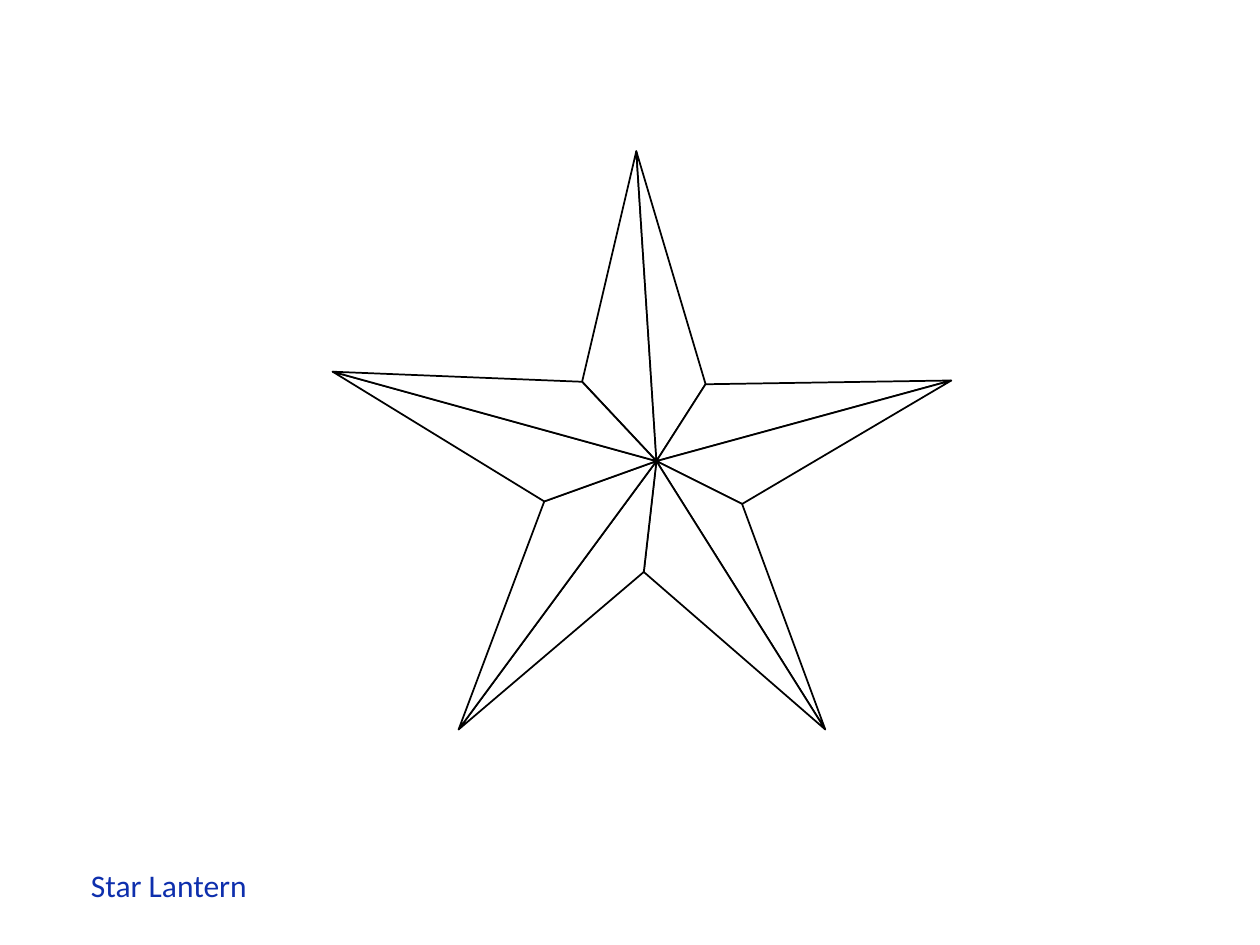
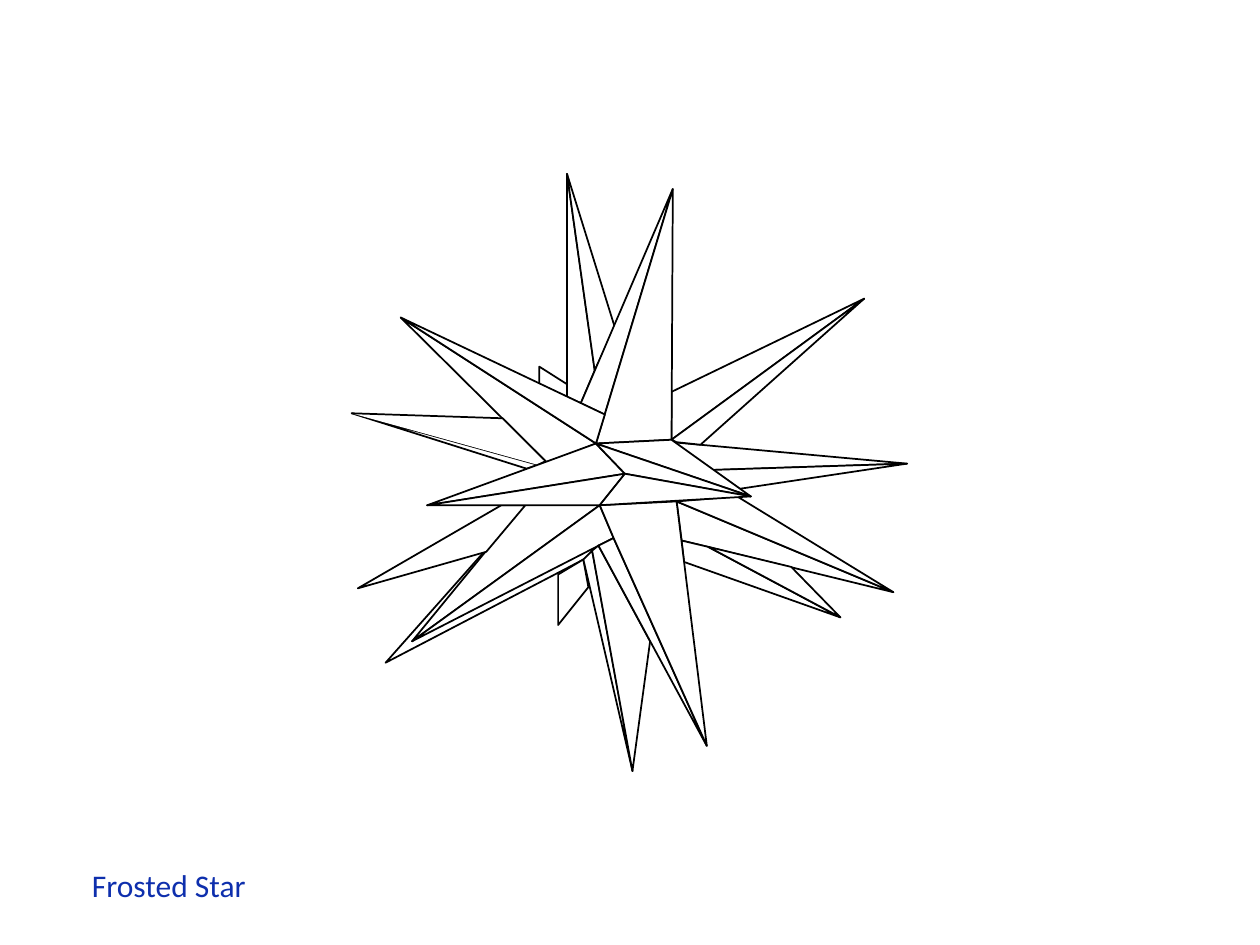
"""Build two slides of paper stars, each star a stack of folded spikes."""
from dataclasses import dataclass
from itertools import pairwise

from pptx import Presentation
from pptx.dml.color import RGBColor
from pptx.enum.text import PP_ALIGN
from pptx.slide import Slide
from pptx.util import Inches, Pt

WHITE = RGBColor(0xFF, 0xFF, 0xFF)
BLACK = RGBColor(0x00, 0x00, 0x00)
BLUE = RGBColor(0x0E, 0x2F, 0xAD)

CAPTION_BOX = {"left": Inches(-2.16), "top": Inches(6.82),
               "width": Inches(7), "height": Inches(1)}
CAPTION_PARAGRAPH = {"alignment": PP_ALIGN.CENTER, "space_before": Pt(3.6)}
CAPTION_FONT = {"name": "Calibri", "size": Pt(18)}
OUTLINE = Pt(1)

Point = tuple[float, float]


@dataclass(frozen=True)
class Spike:
    """A tip over a chain of base points; a ridge runs to each base index in folds."""
    name: str
    tip: Point
    base: tuple[Point, ...]
    folds: tuple[int, ...] = ()
    soft_ridge: bool = False

    def facets(self) -> list[tuple[Point, ...]]:
        """Split the base at the folds and join every part to the tip."""
        cuts = (0, *self.folds, len(self.base) - 1)
        return [(*self.base[a:b + 1], self.tip) for a, b in pairwise(cuts)]


LANTERN_CENTRE = (5.21, 3.66)
LANTERN_TIPS = {"top": (5.05, 1.2), "right": (7.55, 3.02), "lower right": (6.55, 5.79),
                "lower left": (3.64, 5.79), "left": (2.64, 2.95)}
LANTERN_VALLEYS = [(5.6, 3.05), (5.89, 4), (5.11, 4.54), (4.32, 3.98), (4.62, 3.03)]

HUB = (4.96, 3.76)
HUB_NW, HUB_NE = (4.73, 3.52), (5.33, 3.49)
HUB_SW, HUB_SE = (4.76, 4.01), (5.37, 3.98)
NOTCH_N, NOTCH_NW = (4.61, 3.2), (4.8, 3.29)
NOTCH_S, NOTCH_SW, NOTCH_SE = (4.75, 4.33), (4.87, 4.27), (5.41, 4.29)
STUB_FOOT = (4.5, 3.15)
LOW_W_FOOT = (4.17, 4.01)

REAR_SPIKES = [
    Spike("upper stub", (4.28, 2.91), ((4.5, 3.05), STUB_FOOT, (4.28, 3.05))),
    Spike("rear south-west", (3.06, 5.26),
          (LOW_W_FOOT, HUB_SW, NOTCH_SW, (4.7, 4.36), (4.71, 4.4))),
    Spike("lower stub", (4.43, 4.96), ((4.67, 4.66), (4.63, 4.44), (4.43, 4.56))),
]
RING_SPIKES = [
    Spike("east", (7.2, 3.68), ((5.34, 3.51), (5.66, 3.73), (5.87, 3.88)), folds=(1,)),
    Spike("north-east", (6.86, 2.37),
          ((5.33, 3.11), HUB_NE, (5.37, 3.51), (5.56, 3.53)), folds=(1,)),
    Spike("north left", (4.5, 1.38),
          (STUB_FOOT, NOTCH_N, (4.72, 2.94), (4.88, 2.6)), folds=(2,)),
    Spike("north right", (5.34, 1.5), (NOTCH_N, NOTCH_NW, HUB_NW, HUB_NE), folds=(1,)),
    Spike("north-west", (3.18, 2.52), ((4.34, 3.67), HUB_NW, NOTCH_NW), folds=(1,)),
    Spike("west", (2.79, 3.28), ((4.18, 3.72), (4.27, 3.69), (4.33, 3.66), (3.99, 3.32)),
          folds=(1,), soft_ridge=True),
    Spike("south-west", (3.27, 5.09), ((4.18, 3.98), HUB_SW, NOTCH_SW), folds=(1,)),
    Spike("lower west", (2.84, 4.67), ((3.98, 4.01), LOW_W_FOOT, (3.86, 4.38))),
    Spike("south-east", (7.09, 4.7), (NOTCH_SE, HUB_SE, (5.85, 3.94)), folds=(1,)),
    Spike("lower south-east", (6.67, 4.9),
          ((5.43, 4.46), NOTCH_SE, (5.62, 4.34), (6.28, 4.5)), folds=(2,)),
    Spike("south left", (5.02, 6.12),
          ((4.63, 4.44), (4.7, 4.37), NOTCH_S, (5.16, 5.09)), folds=(1,)),
    Spike("south right", (5.61, 5.92), (NOTCH_S, NOTCH_SW, HUB_SW, HUB_SE), folds=(1,)),
]
FRONT_SPIKES = [
    Spike("front left", (3.39, 4.01), (HUB_NW, HUB, HUB_SW), folds=(1,)),
    Spike("front right", (5.96, 3.94), (HUB_NE, HUB_NW, HUB, HUB_SW), folds=(1, 2)),
]


def lantern_spikes() -> list[Spike]:
    """Fold each spike along the centre, between the valleys beside its tip."""
    return [Spike(name, tip, (LANTERN_VALLEYS[i - 1], LANTERN_CENTRE, LANTERN_VALLEYS[i]),
                  folds=(1,))
            for i, (name, tip) in enumerate(LANTERN_TIPS.items())]


def set_format(target: object, values: dict[str, object]) -> None:
    for name, value in values.items():
        setattr(target, name, value)


def add_captioned_slide(prs: Presentation, caption: str) -> Slide:
    s = prs.slides.add_slide(prs.slide_layouts[0])
    title = s.shapes.title.element
    title.getparent().remove(title)
    sp = s.placeholders[1]
    set_format(sp, CAPTION_BOX)
    p = sp.text_frame.paragraphs[0]
    set_format(p, CAPTION_PARAGRAPH)
    r = p.add_run()
    r.text = caption
    set_format(r.font, CAPTION_FONT)
    r.font.color.rgb = BLUE
    return s


def draw_facet(s: Slide, name: str, points: tuple[Point, ...], closed: bool) -> None:
    start, *rest = [(Inches(x), Inches(y)) for x, y in points]
    builder = s.shapes.build_freeform(*start)
    builder.add_line_segments(rest, close=closed)
    sp = builder.convert_to_shape()
    sp.name = name
    sp.shadow.inherit = False
    sp.fill.solid()
    sp.fill.fore_color.rgb = WHITE
    sp.line.color.rgb = BLACK
    sp.line.width = OUTLINE


def draw_spikes(s: Slide, spikes: list[Spike]) -> None:
    """Draw spikes back to front; a soft ridge is left open after the first facet."""
    for spike in spikes:
        for i, points in enumerate(spike.facets()):
            closed = i == 0 or not spike.soft_ridge
            draw_facet(s, f"{spike.name} {i + 1}", points, closed)


def main() -> None:
    prs = Presentation()
    prs.slide_width, prs.slide_height = Inches(10), Inches(7.5)
    stars = {"Star Lantern": lantern_spikes(),
             "Frosted Star": REAR_SPIKES + RING_SPIKES + FRONT_SPIKES}
    for caption, spikes in stars.items():
        draw_spikes(add_captioned_slide(prs, caption), spikes)
    prs.save("out.pptx")


if __name__ == "__main__":
    main()
